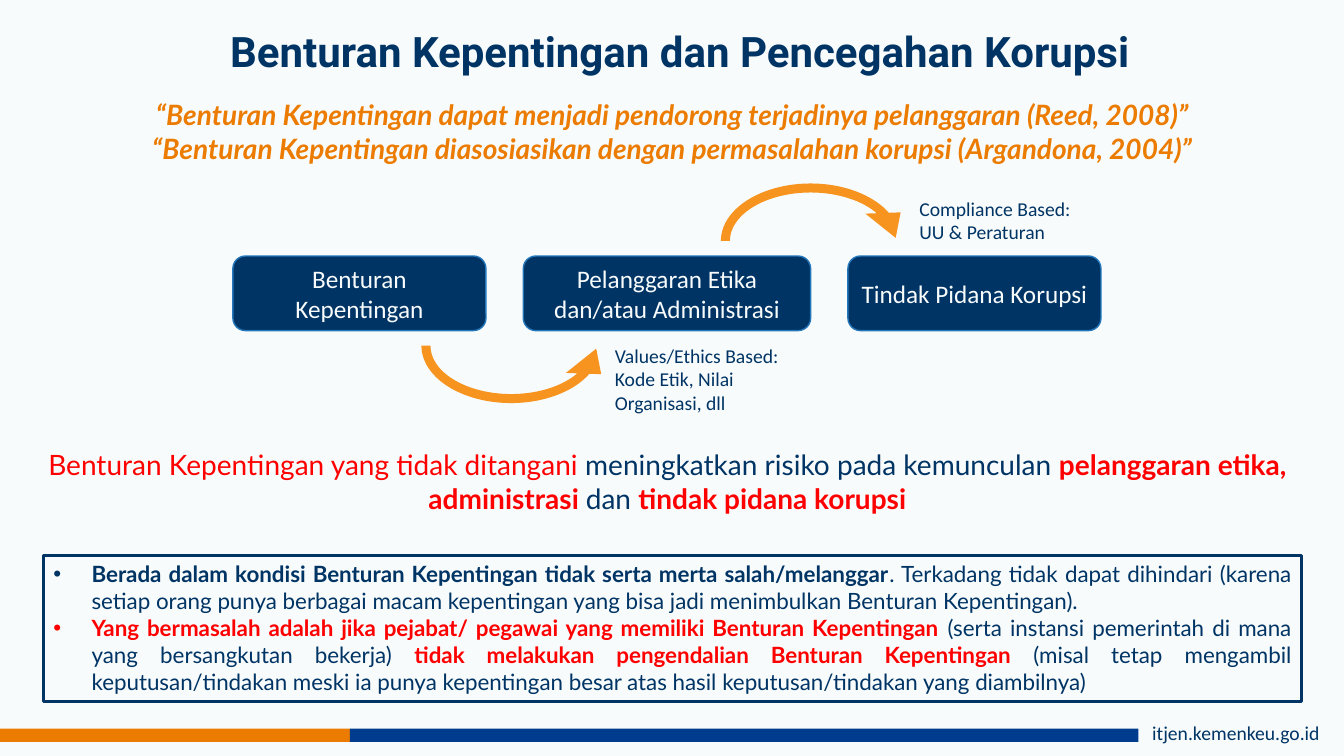
from lxml import etree
from pptx import Presentation
from pptx import util as u
from pptx.dml.color import RGBColor
from pptx.enum import shapes, text
from pptx.oxml.ns import qn

NAVY, ORANGE, ARROW, BLUE = "003465", "EC7C01", "F7931F", "003C8E"
RED, PALE, EDGE = "FF0000", "F8FBFB", "2477BB"
WIDTH, HEIGHT = 13.33, 7.5
ALIGN, SHAPE = text.PP_ALIGN, shapes.MSO_SHAPE

# Content: a paragraph is a list of (text, colour, bold) runs
TITLE = [[("Benturan Kepentingan dan Pencegahan Korupsi", NAVY, True)]]
QUOTES = [
    [("“Benturan Kepentingan dapat menjadi pendorong terjadinya pelanggaran (Reed, 2008)”", ORANGE, True)],
    [("“Benturan Kepentingan diasosiasikan dengan permasalahan korupsi (Argandona, 2004)”", ORANGE, True)],
]
STAGES = [  # label, width
    ("Benturan Kepentingan", 2.51),
    ("Pelanggaran Etika dan/atau Administrasi", 2.85),
    ("Tindak Pidana Korupsi", 2.51),
]
ARROWS = [(4.05, 2.73, True), (7.02, 1.69, False)]  # left, top, flipped
CAPTIONS = [
    ("Values/Ethics Based: Kode Etik, Nilai Organisasi, dll", (6, 3.36, 2.04, 0.81)),
    ("Compliance Based: UU & Peraturan", (9.02, 1.9, 1.9, 0.57)),
]
MESSAGE = [[
    ("Benturan Kepentingan yang tidak ditangani ", RED, False),
    ("meningkatkan risiko pada kemunculan ", NAVY, False),
    ("pelanggaran etika, administrasi ", RED, True),
    ("dan ", NAVY, False),
    ("tindak pidana korupsi", RED, True),
]]
NOTES = [
    [
        ("Berada dalam kondisi Benturan Kepentingan tidak serta merta salah/melanggar", NAVY, True),
        (". Terkadang tidak dapat dihindari (karena setiap orang punya berbagai macam kepentingan "
         "yang bisa jadi menimbulkan Benturan Kepentingan).", NAVY, False),
    ],
    [
        ("Yang bermasalah adalah jika pejabat/ pegawai yang memiliki Benturan Kepentingan", RED, True),
        (" (serta instansi pemerintah di mana yang bersangkutan bekerja) ", NAVY, False),
        ("tidak melakukan pengendalian Benturan Kepentingan", RED, True),
        (" (misal tetap mengambil keputusan/tindakan meski ia punya kepentingan besar atas hasil "
         "keputusan/tindakan yang diambilnya)", NAVY, False),
    ],
]
SITE = "itjen.kemenkeu.go.id"


def colour(value):
    return RGBColor.from_string(value)


def inches(box):
    return [u.Inches(length) for length in box]


def add_bullet(paragraph, indent=0.38):
    properties = paragraph._p.get_or_add_pPr()
    properties.set("marL", str(u.Inches(indent)))
    properties.set("indent", str(-u.Inches(indent)))
    etree.SubElement(properties, qn("a:buFont")).set("typeface", "Arial")
    etree.SubElement(properties, qn("a:buChar")).set("char", "•")


def write(shape, paragraphs, size, font="Calibri", align=ALIGN.LEFT, middle=False,
          italic=False, bullets=False, spacing=None, wrap=True):
    frame = shape.text_frame
    frame.word_wrap = wrap
    frame.auto_size = text.MSO_AUTO_SIZE.NONE
    frame.vertical_anchor = text.MSO_ANCHOR.MIDDLE if middle else text.MSO_ANCHOR.TOP
    for index, runs in enumerate(paragraphs):
        paragraph = frame.add_paragraph() if index else frame.paragraphs[0]
        if bullets:
            add_bullet(paragraph)
        paragraph.alignment = align
        if spacing:
            paragraph.line_spacing = spacing
        for words, ink, bold in runs:
            run = paragraph.add_run()
            run.text = words
            run.font.name, run.font.size = font, u.Pt(size)
            run.font.bold, run.font.italic = bold, italic
            run.font.color.rgb = colour(ink)


def add_text(slide, box, paragraphs, size, **style):
    write(slide.shapes.add_textbox(*inches(box)), paragraphs, size, **style)


def add_shape(slide, kind, box, fill=None, line=None, weight=1):
    shape = slide.shapes.add_shape(kind, *inches(box))
    shape.shadow.inherit = False
    if fill:
        shape.fill.solid()
        shape.fill.fore_color.rgb = colour(fill)
    else:
        shape.fill.background()
    if line:
        shape.line.color.rgb = colour(line)
        shape.line.width = u.Pt(weight)
    else:
        shape.line.fill.background()
    return shape


def main():
    presentation = Presentation()
    presentation.slide_width, presentation.slide_height = inches((WIDTH, HEIGHT))
    slide = presentation.slides.add_slide(presentation.slide_layouts[5])
    slide.background.fill.solid()
    slide.background.fill.fore_color.rgb = colour(PALE)

    # Footer bar and site address
    for left, right, fill in ((0, 3.47, ORANGE), (3.47, 11.29, BLUE)):
        add_shape(slide, SHAPE.RECTANGLE, (left, 7.23, right - left, 0.13), fill)
    add_text(slide, (11.33, 7.1, WIDTH - 11.33, 0.34), [[(SITE, NAVY, False)]], 14, wrap=False)

    # Title and quotes
    title = slide.shapes.title
    title.left, title.top, title.width, title.height = inches((1.77, 0.04, 9.95, 0.98))
    write(title, TITLE, 30, font="Roboto", align=ALIGN.CENTER, middle=True, spacing=0.9)
    add_text(slide, (0.98, 0.92, 11.38, 0.77), QUOTES, 20, font="Lato",
             align=ALIGN.CENTER, italic=True)

    # Row of stages with equal gaps
    left, gap = 2.31, 0.37
    for label, width in STAGES:
        stage = add_shape(slide, SHAPE.ROUNDED_RECTANGLE, (left, 2.54, width, 0.74), NAVY, EDGE)
        write(stage, [[(label, PALE, False)]], 18, align=ALIGN.CENTER, middle=True)
        left += width + gap

    # Curved arrows and their captions
    for left, top, flipped in ARROWS:
        arrow = add_shape(slide, SHAPE.CIRCULAR_ARROW, (left, top, 2.04, 1.4), ARROW)
        for index, value in enumerate((0.064, 11.423, 203.365, 108, 0.125)):
            arrow.adjustments[index] = value
        if flipped:
            arrow.element.spPr.find(qn("a:xfrm")).set("flipV", "1")
    for caption, box in CAPTIONS:
        add_text(slide, box, [[(caption, NAVY, False)]], 14)

    # Key message and framed notes
    add_text(slide, (0.38, 4.39, 12.48, 0.77), MESSAGE, 20, font="Lato", align=ALIGN.CENTER)
    frame = add_shape(slide, SHAPE.RECTANGLE, (0.43, 5.51, 12.48, 1.45), line=NAVY, weight=2.25)
    write(frame, NOTES, 16, font="Lato", align=ALIGN.JUSTIFY, bullets=True)

    presentation.save("out.pptx")


if __name__ == "__main__":
    main()
